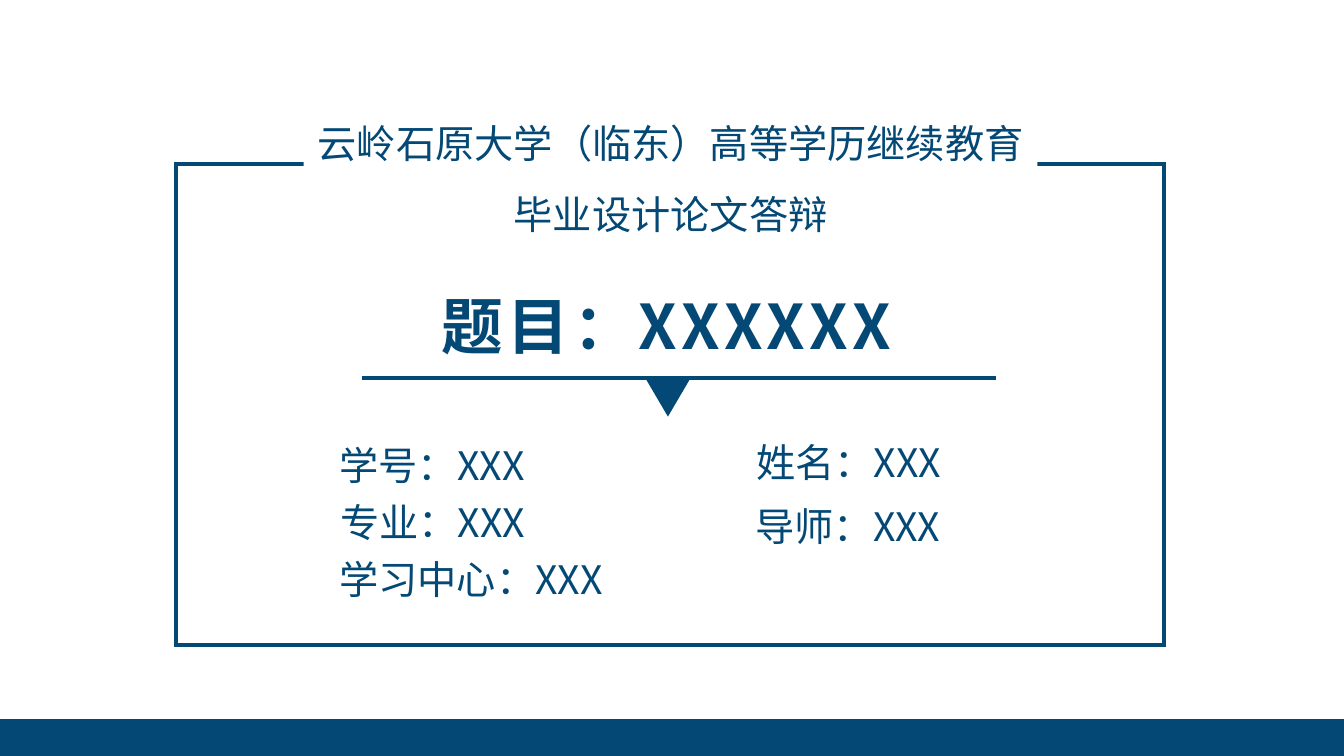
from pptx import Presentation
from pptx import util as u
from pptx.dml.color import RGBColor
from pptx.enum import shapes, text
from pptx.oxml import parse_xml
from pptx.oxml.ns import nsdecls

COLORS = {"navy": "044875", "white": "FFFFFF"}
FONT = "Noto Sans CJK SC"
LINE_WIDTH = u.Pt(2)
SHAPE = shapes.MSO_SHAPE
WIDTH = 10
HEIGHT = WIDTH * 9 / 16
FOOTER_TOP = 5.35

# label, left, top, width
DETAILS = [
    ("学号：XXX", 2, 3.23, 2.43),
    ("导师：XXX", 5.26, 3.69, 2.1),
    ("姓名：XXX", 5.37, 3.21, 1.89),
    ("专业：XXX", 2.17, 3.66, 2.1),
    ("学习中心：XXX", 1.31, 4.08, 4.39),
]


def color(name):
    return RGBColor.from_string(COLORS[name])


def inches(*lengths):
    return [u.Inches(length) for length in lengths]


def write(box, words, size=21, bold=False, spacing=None, line_spacing=1.0):
    """Fill a box with one centred navy paragraph; spacing is in points."""
    frame = box.text_frame
    frame_format = {
        "word_wrap": True,
        "auto_size": text.MSO_AUTO_SIZE.NONE,
        "vertical_anchor": text.MSO_ANCHOR.MIDDLE,
    }
    for name, value in frame_format.items():
        setattr(frame, name, value)
    para = frame.paragraphs[0]
    para.alignment = text.PP_ALIGN.CENTER
    para.line_spacing = line_spacing
    span = para.add_run()
    span.text = words
    for name, value in {"name": FONT, "size": u.Pt(size), "bold": bold}.items():
        setattr(span.font, name, value)
    span.font.color.rgb = color("navy")
    properties = span.font._element
    properties.append(parse_xml(f'<a:ea {nsdecls("a")} typeface="{FONT}"/>'))
    if spacing:
        properties.set("spc", str(round(spacing * 100)))


def add_title(slide, words, area):
    title = slide.shapes.title
    for name, value in zip(("left", "top", "width", "height"), inches(*area)):
        setattr(title, name, value)
    write(title, words, size=33, bold=True, spacing=2.2)


def add_shape(slide, kind, area, fill=None, line=None):
    shape = slide.shapes.add_shape(kind, *inches(*area))
    shape.shadow.inherit = False
    if fill:
        shape.fill.solid()
        shape.fill.fore_color.rgb = color(fill)
    else:
        shape.fill.background()
    if line:
        shape.line.color.rgb = color(line)
        shape.line.width = LINE_WIDTH
        outline = shape.line._get_or_add_ln()
        outline.append(parse_xml(f'<a:miter {nsdecls("a")} lim="800000"/>'))
    else:
        shape.line.fill.background()
    return shape


def add_rule(slide, left, right, top):
    rule = slide.shapes.add_connector(
        shapes.MSO_CONNECTOR.STRAIGHT, *inches(left, top, right, top))
    rule.line.color.rgb = color("navy")
    rule.line.width = LINE_WIDTH
    rule._element.spPr.append(parse_xml(f'<a:effectLst {nsdecls("a")}/>'))


def add_detail(slide, words, left, top, width):
    write(slide.shapes.add_textbox(*inches(left, top, width, 0.45)), words)


def main():
    deck = Presentation()
    deck.slide_width, deck.slide_height = inches(WIDTH, HEIGHT)
    slide = deck.slides.add_slide(deck.slide_layouts[5])

    add_title(slide, "题目：XXXXXX", (1.61, 2.09, 6.7, 0.66))
    add_rule(slide, 2.69, 7.41, 2.81)
    add_shape(slide, SHAPE.FLOWCHART_MERGE, (4.8, 2.81, 0.34, 0.29), fill="navy")

    add_shape(slide, SHAPE.RECTANGLE, (1.31, 1.22, 7.35, 3.58), line="navy")
    for left, width in ((9.49, 0.51), (0, 9.5)):
        area = (left, FOOTER_TOP, width, HEIGHT - FOOTER_TOP)
        add_shape(slide, SHAPE.RECTANGLE, area, fill="navy")

    heading = add_shape(slide, SHAPE.RECTANGLE, (2.26, 0.66, 5.46, 1.16), fill="white")
    write(heading, "云岭石原大学（临东）高等学历继续教育毕业设计论文答辩", line_spacing=1.5)
    for detail in DETAILS:
        add_detail(slide, *detail)

    deck.save("out.pptx")


if __name__ == "__main__":
    main()
